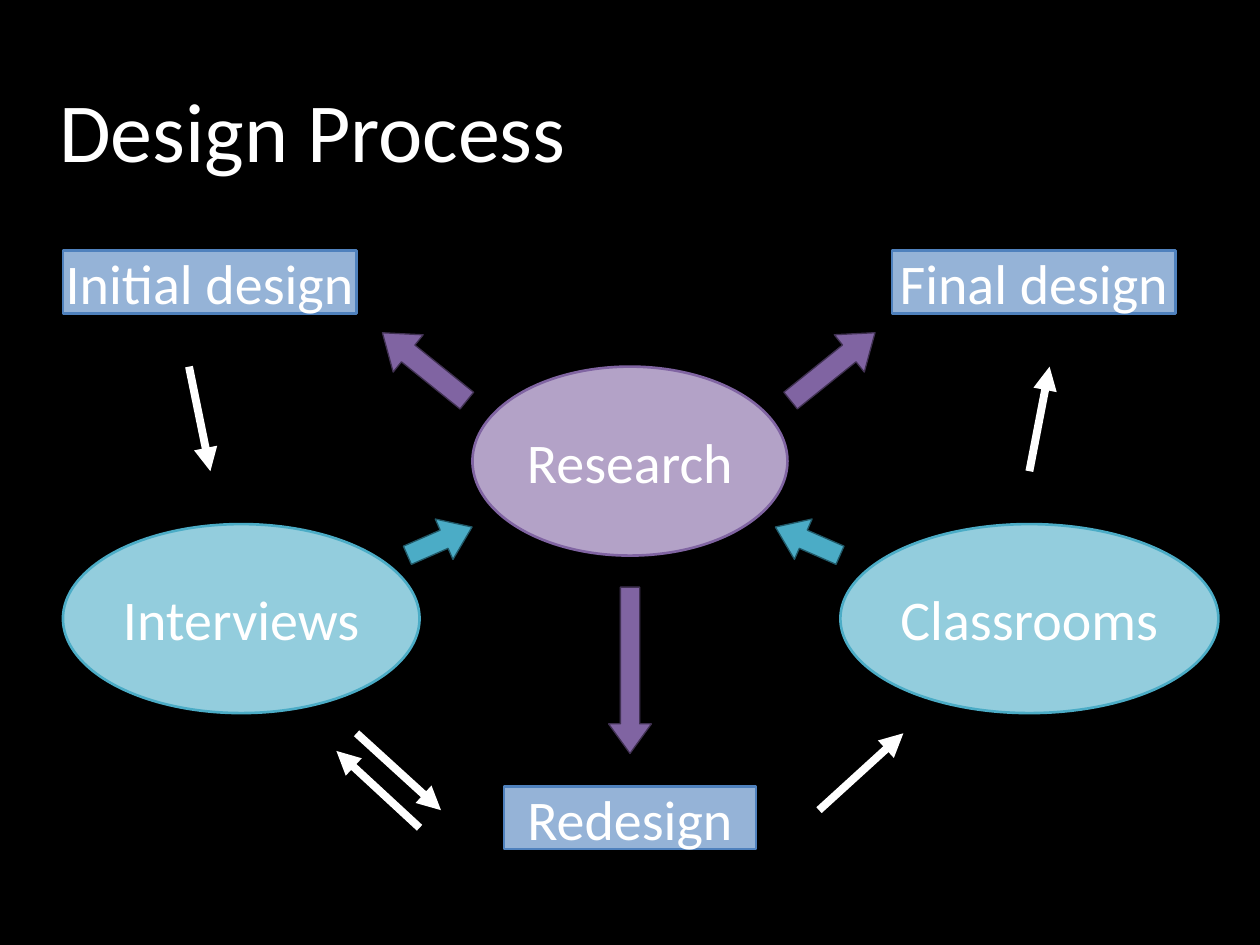
from lxml import etree
from pptx import Presentation
from pptx.dml.color import RGBColor
from pptx.enum.shapes import MSO_CONNECTOR, MSO_SHAPE
from pptx.enum.text import MSO_ANCHOR as Anchor, PP_ALIGN as Align
from pptx.oxml.ns import qn
from pptx.util import Inches, Pt

COLORS = {
    "background": "000000", "white": "FFFFFF",
    "blue": "95B3D7", "blue line": "4F81BD",
    "aqua": "93CDDD", "aqua line": "4BACC6", "aqua dark": "215968",
    "purple": "B3A2C7", "purple line": "8064A2", "purple dark": "403152",
}


def color(name):
    return RGBColor.from_string(COLORS[name])


class DiagramSlide:
    font = "Calibri"
    label_size = 32
    title_size = 48

    def __init__(self, presentation):
        self.slide = presentation.slides.add_slide(presentation.slide_layouts[6])
        fill = self.slide.background.fill
        fill.solid()
        fill.fore_color.rgb = color("background")

    def set_text(self, shape, text, size, align, anchor, left_margin=0):
        frame = shape.text_frame
        frame.word_wrap = True
        frame.vertical_anchor = anchor
        frame.margin_left = Inches(left_margin)
        frame.margin_top = frame.margin_right = frame.margin_bottom = 0
        frame.text = text
        paragraph = frame.paragraphs[0]
        paragraph.alignment = align
        font = paragraph.runs[0].font
        font.name, font.size = self.font, Pt(size)
        font.color.rgb = color("white")

    def title(self, text, *box):
        shape = self.slide.shapes.add_textbox(*map(Inches, box))
        self.set_text(shape, text, self.title_size, Align.LEFT, Anchor.BOTTOM, 0.08)

    def shape(self, kind, box, fill, line, line_width):
        shape = self.slide.shapes.add_shape(kind, *map(Inches, box))
        shape.shadow.inherit = False
        shape.fill.solid()
        shape.fill.fore_color.rgb = color(fill)
        shape.line.color.rgb = color(line)
        shape.line.width = Pt(line_width)
        return shape

    def node(self, kind, text, theme, *box):
        shape = self.shape(kind, box, theme, f"{theme} line", 1.5)
        self.set_text(shape, text, self.label_size, Align.CENTER, Anchor.MIDDLE)

    def block_arrow(self, theme, rotation, *box):
        shape = self.shape(MSO_SHAPE.RIGHT_ARROW, box,
                           f"{theme} line", f"{theme} dark", 0.75)
        shape.adjustments[0], shape.adjustments[1] = 0.45, 0.69
        shape.rotation = rotation

    def line_arrow(self, *ends):
        connector = self.slide.shapes.add_connector(
            MSO_CONNECTOR.STRAIGHT, *map(Inches, ends))
        connector.line.color.rgb = color("white")
        connector.line.width = Pt(4.5)
        properties = connector._element.spPr
        etree.SubElement(properties.find(qn("a:ln")), qn("a:tailEnd"),
                         type="triangle")
        etree.SubElement(properties, qn("a:effectLst"))


def main():
    presentation = Presentation()
    presentation.slide_width, presentation.slide_height = Inches(10), Inches(7.5)
    diagram = DiagramSlide(presentation)
    diagram.title("Design Process", 0.39, 0.25, 8.4, 1.17)

    # Stages of the design
    for text, left, top, width in (("Initial design", 0.5, 1.99, 2.33),
                                   ("Redesign", 4, 6.24, 2),
                                   ("Final design", 7.08, 1.99, 2.25)):
        diagram.node(MSO_SHAPE.RECTANGLE, text, "blue", left, top, width, 0.5)

    # Sources of knowledge
    for text, theme, left, top, width in (("Interviews", "aqua", 0.5, 4.16, 2.83),
                                          ("Research", "purple", 3.75, 2.91, 2.5),
                                          ("Classrooms", "aqua", 6.67, 4.16, 3)):
        diagram.node(MSO_SHAPE.OVAL, text, theme, left, top, width, 1.5)

    # Arrows into and out of Research
    for theme, rotation, *box in (("purple", 218.8, 2.94, 2.72, 0.86, 0.38),
                                  ("purple", 321.2, 6.18, 2.72, 0.86, 0.38),
                                  ("purple", 90, 4.34, 5.15, 1.32, 0.34),
                                  ("aqua", 336.4, 3.21, 4.12, 0.56, 0.35),
                                  ("aqua", 203.6, 6.13, 4.12, 0.56, 0.35)):
        diagram.block_arrow(theme, rotation, *box)

    # Path from the initial to the final design
    for ends in ((1.5, 2.91, 1.67, 3.74),
                 (2.83, 5.82, 3.5, 6.43),
                 (3.33, 6.57, 2.67, 5.96),
                 (6.5, 6.43, 7.17, 5.82),
                 (8.17, 3.74, 8.33, 2.91)):
        diagram.line_arrow(*ends)

    presentation.save("out.pptx")


if __name__ == "__main__":
    main()
